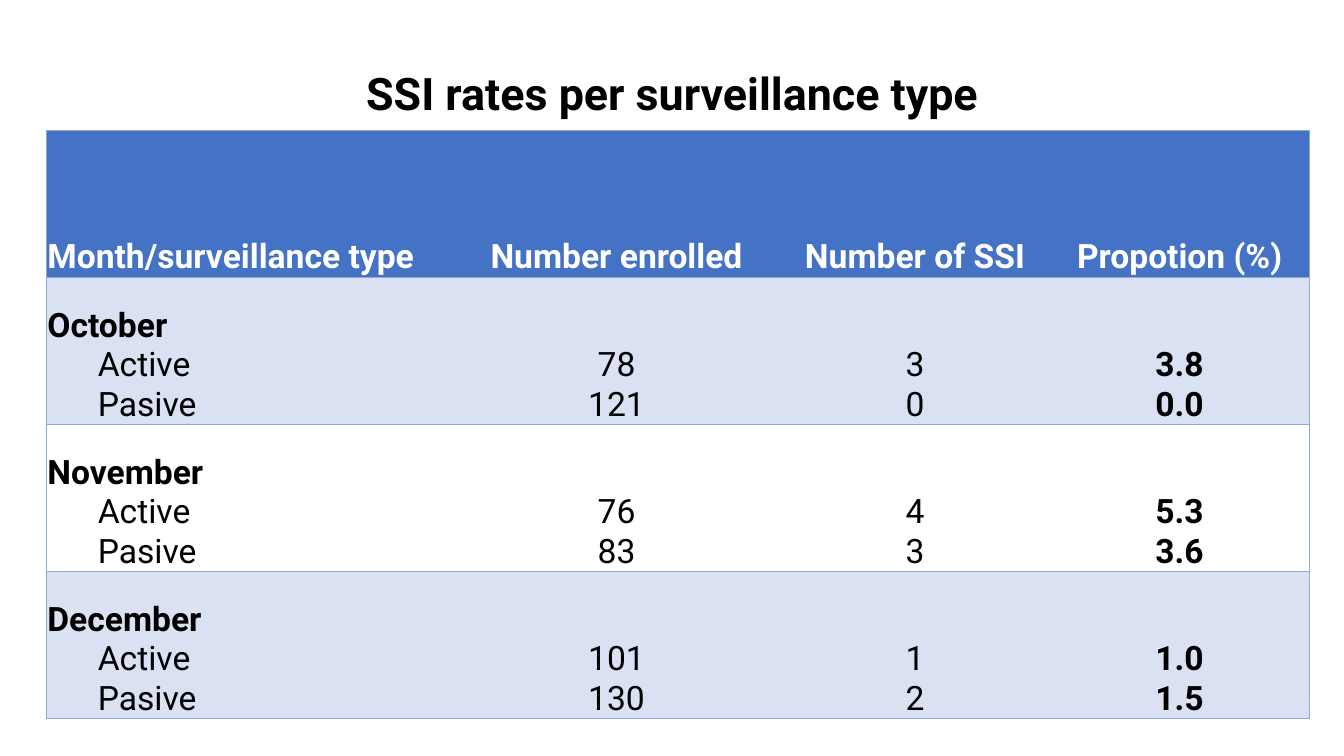
from lxml import etree
from pptx import Presentation
from pptx.dml.color import RGBColor
from pptx.enum.text import MSO_ANCHOR, PP_ALIGN
from pptx.oxml.ns import qn
from pptx.util import Inches, Pt

LEFT, CENTER = PP_ALIGN.LEFT, PP_ALIGN.CENTER
MIDDLE, BOTTOM = MSO_ANCHOR.MIDDLE, MSO_ANCHOR.BOTTOM
BLACK, WHITE = "000000", "FFFFFF"
HEADER_BLUE, BAND_BLUE, BORDER_BLUE = "4472C4", "D9E1F2", "8EA9DB"

HEADINGS = ["Month/surveillance type", "Number enrolled", "Number of SSI", "Propotion (%)"]
TYPES = ["Active", "Pasive"]
MONTHS = {
    "October": [("78", "121"), ("3", "0"), ("3.8", "0.0")],
    "November": [("76", "83"), ("4", "3"), ("5.3", "3.6")],
    "December": [("101", "130"), ("1", "2"), ("1.0", "1.5")],
}
COLUMN_WIDTHS = [4.03, 3.25, 2.67, 2.58]
ROW_HEIGHT = 1.46


def color(hex_value):
    return RGBColor.from_string(hex_value)


def write_lines(frame, lines, align, size, hex_value):
    """Write (text, bold, indented) lines, one paragraph each."""
    for index, (text, bold, indented) in enumerate(lines):
        para = frame.paragraphs[0] if index == 0 else frame.add_paragraph()
        para.alignment = align
        if indented:
            para.level = 1
            properties = para._p.get_or_add_pPr()
            properties.set("marL", str(Inches(0.5)))
            properties.set("indent", "0")
        span = para.add_run()
        span.text = text
        for name, value in {"name": "Roboto", "size": Pt(size), "bold": bold}.items():
            setattr(span.font, name, value)
        span.font.color.rgb = color(hex_value)


deck = Presentation()
deck.slide_width, deck.slide_height = Inches(13.33), Inches(7.5)
page = deck.slides.add_slide(deck.slide_layouts[6])

# Title
title_box = page.shapes.add_textbox(Inches(0.92), Inches(0.4), Inches(11.5), Inches(1.1))
title = title_box.text_frame
title.word_wrap = True
title.vertical_anchor = MIDDLE
write_lines(title, [("SSI rates per surveillance type", True, False)], CENTER, 32, BLACK)
title.paragraphs[0].line_spacing = 0.9

# Table grid
row_count, column_count = len(MONTHS) + 1, len(HEADINGS)
table = page.shapes.add_table(
    row_count, column_count, Inches(0.46), Inches(1.29),
    Inches(sum(COLUMN_WIDTHS)), Inches(ROW_HEIGHT * row_count)).table
table.horz_banding = False
for column, width in zip(table.columns, COLUMN_WIDTHS):
    column.width = Inches(width)
for row in table.rows:
    row.height = Inches(ROW_HEIGHT)

# Lines of text for every cell: headings, then one row per month
content = [[[(heading, True, False)] for heading in HEADINGS]]
for month, figures in MONTHS.items():
    month_cell = [(month, True, False)] + [(kind, False, True) for kind in TYPES]
    figure_cells = [[(figure, number == column_count - 2, False) for figure in pair]
                    for number, pair in enumerate(figures)]
    content.append([month_cell] + figure_cells)

# Cell text, borders and fills
cell_format = {
    "margin_left": Inches(0.01), "margin_right": Inches(0.01),
    "margin_top": Inches(0.01), "margin_bottom": 0, "vertical_anchor": BOTTOM,
}
for row_number, row_content in enumerate(content):
    for column_number, lines in enumerate(row_content):
        cell = table.cell(row_number, column_number)
        for name, value in cell_format.items():
            setattr(cell, name, value)
        write_lines(cell.text_frame, lines, CENTER if column_number else LEFT,
                    24, BLACK if row_number else WHITE)

        # Rules run between rows and round the table, not between columns
        sides = {"lnL": column_number == 0, "lnR": column_number == column_count - 1,
                 "lnT": True, "lnB": True}
        cell_properties = cell._tc.get_or_add_tcPr()
        for side, visible in sides.items():
            edge = etree.SubElement(cell_properties, qn(f"a:{side}"), w=str(Pt(0.5)))
            paint = etree.SubElement(edge, qn("a:solidFill" if visible else "a:noFill"))
            if visible:
                etree.SubElement(paint, qn("a:srgbClr"), val=BORDER_BLUE)

        if row_number == 2:
            cell.fill.background()
        else:
            cell.fill.solid()
            cell.fill.fore_color.rgb = color(BAND_BLUE if row_number else HEADER_BLUE)

deck.save("out.pptx")
